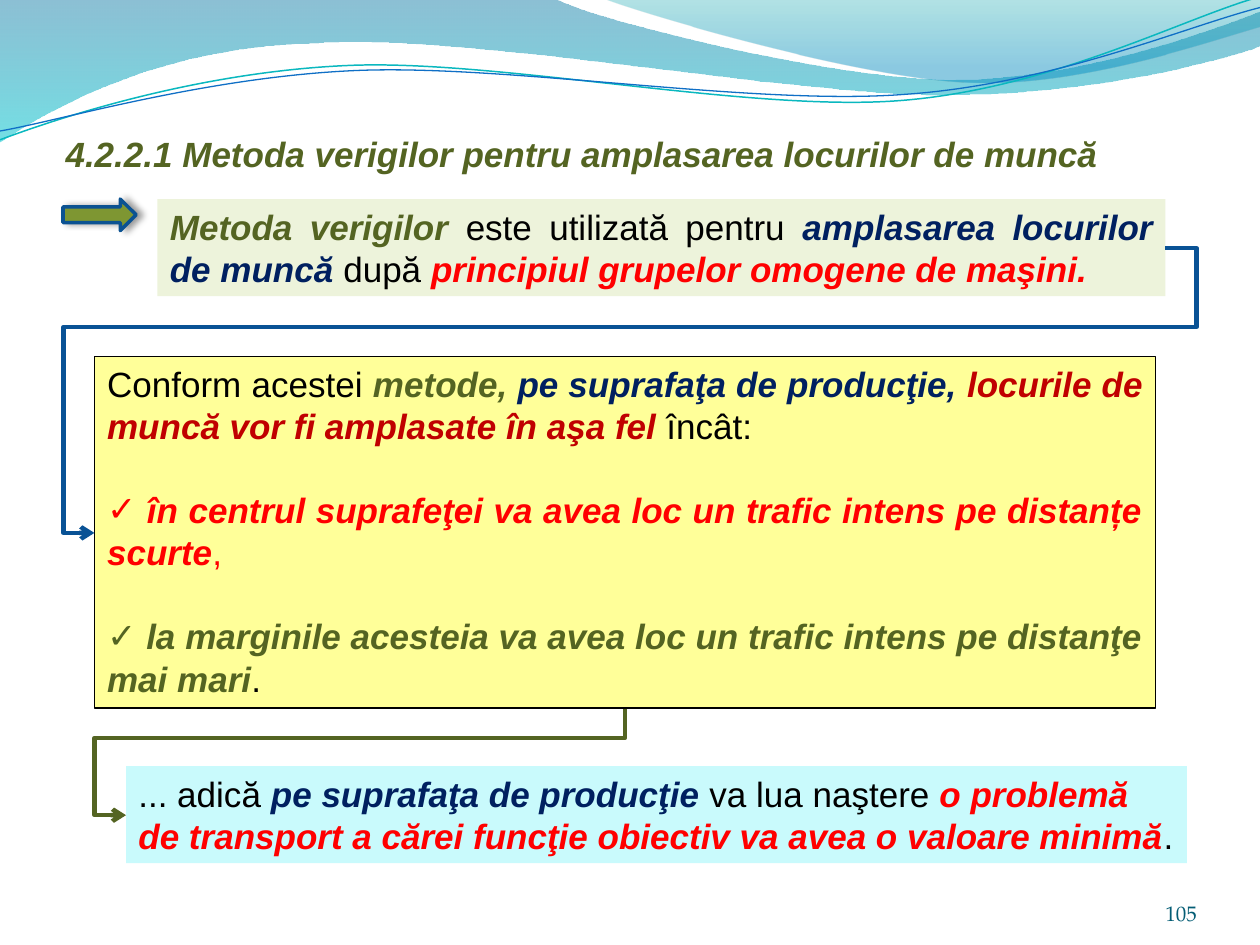
from pptx import Presentation
from pptx.dml.color import RGBColor
from pptx.enum.shapes import MSO_CONNECTOR, MSO_SHAPE
from pptx.enum.text import MSO_ANCHOR, MSO_AUTO_SIZE, PP_ALIGN
from pptx.oxml.ns import qn
from pptx.util import Inches, Pt
from lxml import etree

RECT, ARROW = MSO_SHAPE.RECTANGLE, MSO_SHAPE.RIGHT_ARROW
ELBOW = MSO_CONNECTOR.ELBOW
LEFT, RIGHT, JUSTIFY = PP_ALIGN.LEFT, PP_ALIGN.RIGHT, PP_ALIGN.JUSTIFY
TOP, BOTTOM = MSO_ANCHOR.TOP, MSO_ANCHOR.BOTTOM
NO_FIT = MSO_AUTO_SIZE.NONE

BLACK = RGBColor(0x00, 0x00, 0x00)
OLIVE = RGBColor(0x54, 0x64, 0x22)
NAVY = RGBColor(0x00, 0x20, 0x60)
RED = RGBColor(0xFF, 0x00, 0x00)
DARK_RED = RGBColor(0xC0, 0x00, 0x00)
GREEN = RGBColor(0x7E, 0x96, 0x32)
BLUE = RGBColor(0x0B, 0x52, 0x92)
LINK_BLUE = RGBColor(0x09, 0x52, 0x95)
PALE_GREEN = RGBColor(0xED, 0xF3, 0xDB)
YELLOW = RGBColor(0xFF, 0xFF, 0x99)
PALE_CYAN = RGBColor(0xC9, 0xFA, 0xFC)
NUMBER = RGBColor(0x04, 0x5D, 0x75)
WAVE_BLUE = RGBColor(0x00, 0x74, 0xA1)
WAVE_CYAN = RGBColor(0x00, 0xC6, 0xCF)
WAVE_TEAL = RGBColor(0x00, 0xA1, 0xA9)
WAVE_SKY = RGBColor(0x00, 0x8B, 0xBF)
LINE_TEAL = RGBColor(0x0A, 0xB8, 0xBF)
LINE_BLUE = RGBColor(0x0F, 0x6F, 0xC6)


def add_xml(parent, tag, **attrs):
    el = etree.SubElement(parent, qn(tag))
    for key, value in attrs.items():
        el.set(key, str(value))
    return el


class Deck:
    font, size, leading = "Arial", 20, 24

    def __init__(self):
        self.prs = Presentation()
        self.prs.slide_width, self.prs.slide_height = Inches(10), Inches(7.5)
        self.s = self.prs.slides.add_slide(self.prs.slide_layouts[1])

    def place(self, sp, x, y, w, h):
        sp.left, sp.top, sp.width, sp.height = map(Inches, (x, y, w, h))
        return sp

    def runs(self, p, parts, align=JUSTIFY):
        """Each part is (text, colour, emphasised)."""
        p.alignment = align
        p.line_spacing = Pt(self.leading)
        p.space_before = p.space_after = Pt(0)
        for text, color, strong in parts:
            r = p.add_run()
            r.text = text
            r.font.name, r.font.size = self.font, Pt(self.size)
            r.font.bold = r.font.italic = strong
            r.font.color.rgb = color

    def frame(self, sp):
        tf = sp.text_frame
        tf.word_wrap, tf.auto_size, tf.vertical_anchor = True, NO_FIT, TOP
        return tf

    def title(self, box, parts):
        sp = self.place(self.s.shapes.title, *box)
        self.runs(self.frame(sp).paragraphs[0], parts)

    def checklist(self, box, fill, intro, items):
        sp = self.place(self.s.placeholders[1], *box)
        sp.fill.solid()
        sp.fill.fore_color.rgb = fill
        sp.line.color.rgb, sp.line.width = BLACK, Pt(1)
        tf = self.frame(sp)
        for i, parts in enumerate([intro] + items):
            p = tf.add_paragraph() if i else tf.paragraphs[0]
            self.runs(p, parts)
            pPr = p._p.get_or_add_pPr()
            pPr.set("marL", "0")
            pPr.set("indent", "0")
            if i:
                p.space_before = Pt(self.leading)
                add_xml(pPr, "a:buChar", char="✓")
            else:
                add_xml(pPr, "a:buNone")

    def shape(self, kind, box, fill):
        sp = self.s.shapes.add_shape(kind, *map(Inches, box))
        sp.shadow.inherit = False
        sp.fill.solid()
        sp.fill.fore_color.rgb = fill
        sp.line.fill.background()
        return sp

    def panel(self, box, fill, parts, align=JUSTIFY):
        sp = self.shape(RECT, box, fill)
        self.runs(self.frame(sp).paragraphs[0], parts, align)

    def arrow(self, box):
        sp = self.shape(ARROW, box, GREEN)
        sp.line.color.rgb, sp.line.width = BLUE, Pt(2)
        effects = sp._element.spPr.find(qn("a:effectLst"))
        shadow = add_xml(effects, "a:outerShdw", blurRad=Pt(4), dist=Pt(3), dir=0)
        add_xml(add_xml(shadow, "a:srgbClr", val=BLACK), "a:alpha", val=40000)

    def elbow(self, start, end, preset, percents, color, rot=0):
        c = self.s.shapes.add_connector(ELBOW, *map(Inches, start + end))
        c.line.color.rgb, c.line.width = color, Pt(2.5)
        spPr = c._element.spPr
        spPr.find(qn("a:xfrm")).set("rot", str(rot * 60000))
        geom = spPr.find(qn("a:prstGeom"))
        geom.set("prst", preset)
        for old in list(geom):
            geom.remove(old)
        guides = add_xml(geom, "a:avLst")
        for i, percent in enumerate(percents, 1):
            add_xml(guides, "a:gd", name=f"adj{i}", fmla=f"val {round(percent * 1000)}")
        add_xml(spPr.find(qn("a:ln")), "a:tailEnd", type="arrow")
        add_xml(spPr, "a:effectLst")

    def freeform(self, start, segments, close):
        """A segment is an end point, or two control points and an end point."""
        fb = self.s.shapes.build_freeform(*map(Inches, start))
        fb.add_line_segments([tuple(map(Inches, seg[-2:])) for seg in segments], close=close)
        sp = fb.convert_to_shape()
        sp.shadow.inherit = False
        sides = list(sp._element.spPr.iter(qn("a:lnTo")))
        for side, seg in zip(sides, segments):
            if len(seg) == 6:
                bend = etree.Element(qn("a:cubicBezTo"))
                for x, y in zip(seg[::2], seg[1::2]):
                    add_xml(bend, "a:pt", x=Inches(x) - sp.left, y=Inches(y) - sp.top)
                side.getparent().replace(side, bend)
        return sp

    def wave(self, start, segments, stops):
        sp = self.freeform(start, segments, True)
        sp.line.fill.background()
        sp.fill.gradient()
        sp.fill.gradient_angle = 270
        for stop, (pos, color, _) in zip(sp.fill.gradient_stops, stops):
            stop.position, stop.color.rgb = pos, color
        for clr, (_, _, alpha) in zip(sp._element.spPr.iter(qn("a:srgbClr")), stops):
            add_xml(clr, "a:alpha", val=alpha * 1000)

    def wave_line(self, start, segments, color, width):
        sp = self.freeform(start, segments, False)
        sp.fill.background()
        sp.line.color.rgb, sp.line.width = color, Pt(width)

    def number(self, box, text):
        tf = self.frame(self.s.shapes.add_textbox(*map(Inches, box)))
        tf.margin_left = tf.margin_right = tf.margin_top = tf.margin_bottom = 0
        tf.vertical_anchor = BOTTOM
        p = tf.paragraphs[0]
        p.alignment = RIGHT
        r = p.add_run()
        r.text = text
        r.font.name, r.font.size, r.font.color.rgb = "TeX Gyre Pagella", Pt(12), NUMBER


def main():
    d = Deck()

    # Wave banner
    d.wave((0, 0), [(4.4, -0.01), (4.76, 0.17, 6.64, 0.63, 7.58, 0.63),
                    (8.53, 0.63, 9.58, 0.26, 10, 0.09), (10.01, 0.36),
                    (9.83, 0.44, 8.7, 0.76, 7.46, 0.75), (6.22, 0.75, 3.82, 0.28, 2.57, 0.34),
                    (1.29, 0.36, 0.46, 0.83, -0.01, 1.13)],
           [(0, WAVE_BLUE, 45), (1, WAVE_CYAN, 55)])
    d.wave((4.79, -0.01), [(5.09, 0.11, 6.82, 0.62, 7.69, 0.65),
                           (8.56, 0.69, 9.61, 0.32, 10, 0.21), (10, 0)],
           [(0, WAVE_TEAL, 30), (0.8, WAVE_SKY, 45)])
    d.wave_line((0, 1.11), [(0.48, 0.93, 1.58, 0.57, 2.77, 0.52),
                            (3.95, 0.47, 5.93, 0.89, 7.13, 0.8),
                            (8.33, 0.71, 9.38, 0.15, 9.98, -0.02)], LINE_TEAL, 0.85)
    d.wave_line((0, 1.04), [(0.47, 0.96, 1.64, 0.61, 2.83, 0.56),
                            (4.03, 0.51, 5.97, 0.84, 7.17, 0.75),
                            (8.36, 0.67, 9.41, 0.21, 10, 0.06)], LINE_BLUE, 0.75)

    # Title and method definition
    d.title((0.42, 1, 8.83, 0.44),
            [("4.2.2.1 Metoda verigilor pentru amplasarea locurilor de muncă", OLIVE, True)])
    d.panel((1.25, 1.58, 8, 0.77), PALE_GREEN, [
        ("Metoda verigilor ", OLIVE, True), ("este utilizată pentru ", BLACK, False),
        ("amplasarea locurilor de muncă ", NAVY, True), ("după ", BLACK, False),
        ("principiul grupelor omogene de maşini.", RED, True)])
    d.arrow((0.5, 1.58, 0.58, 0.25))

    # Placement rules
    d.checklist((0.75, 2.83, 8.42, 2.79), YELLOW, [
        ("Conform acestei ", BLACK, False), ("metode, ", OLIVE, True),
        ("pe suprafaţa de producţie, ", NAVY, True),
        ("locurile de muncă vor fi amplasate în aşa fel", DARK_RED, True),
        (" încât:", BLACK, False)], [
        [(" ", RED, False),
         ("în centrul suprafeţei va avea loc un trafic intens pe distanțe scurte", RED, True),
         (", ", RED, False)],
        [(" la marginile acesteia va avea loc un trafic intens pe distanţe mai mari", OLIVE, True),
         (".", BLACK, False)]])

    # Conclusion
    d.panel((1, 6.08, 8.42, 0.77), PALE_CYAN, [
        ("... adică ", BLACK, False), ("pe suprafaţa de producţie ", NAVY, True),
        ("va lua naştere ", BLACK, False),
        ("o problemă de transport a cărei funcţie obiectiv va avea o valoare minimă", RED, True),
        (".", BLACK, False)], LEFT)

    # Connectors between the steps
    d.elbow((9.25, 1.97), (0.75, 4.23), "bentConnector5", (-2.9, 27.7, 102.9), LINK_BLUE)
    d.elbow((2.56, 4.07), (3.4, 8.03), "bentConnector4", (27.1, 106.3), OLIVE, rot=90)

    d.number((8.67, 6.95, 0.83, 0.4), "105")
    d.prs.save("out.pptx")


if __name__ == "__main__":
    main()
